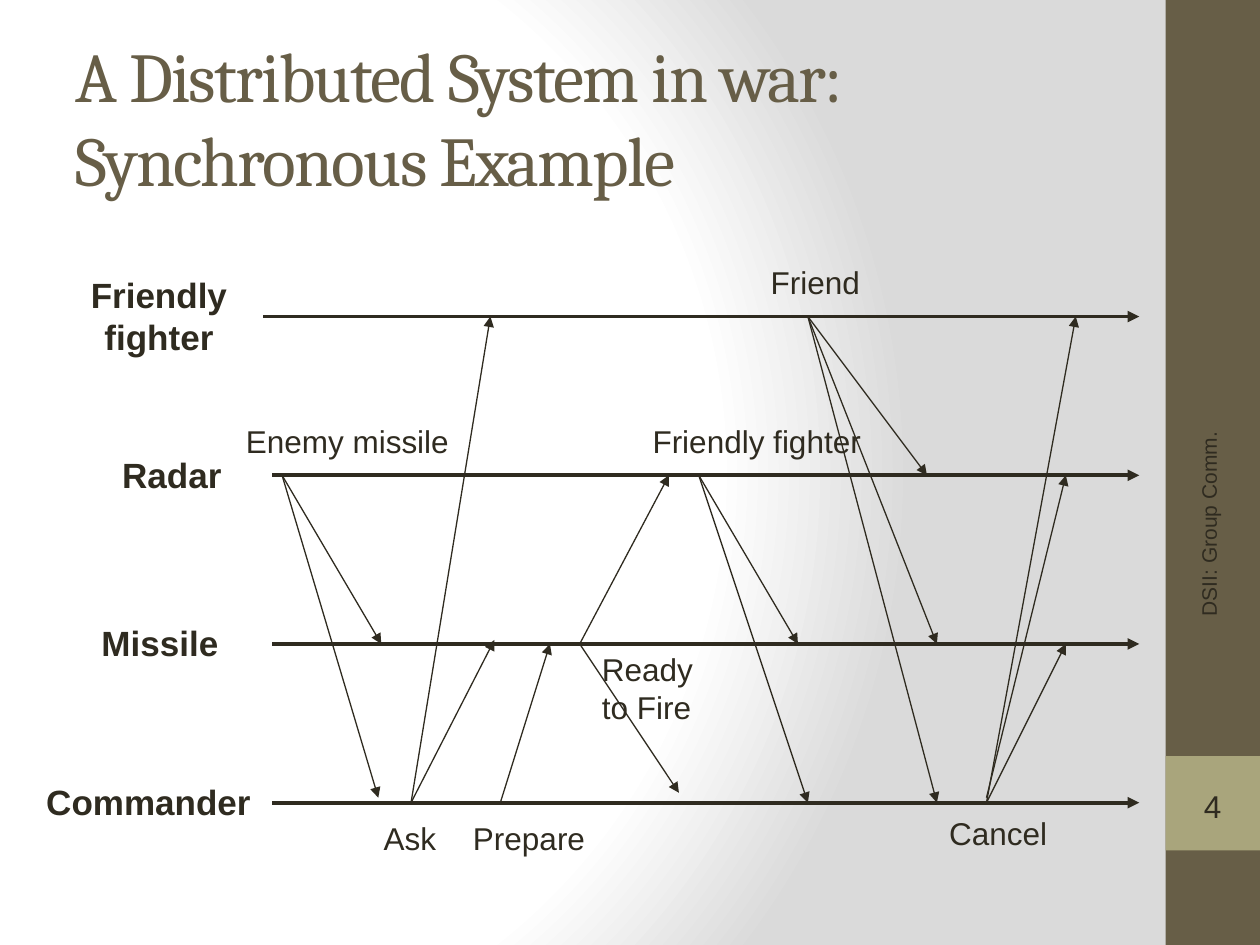
from collections import namedtuple
from dataclasses import dataclass

from pptx import Presentation
from pptx.dml.color import RGBColor
from pptx.enum.shapes import MSO_CONNECTOR, MSO_SHAPE
from pptx.enum.text import MSO_ANCHOR, MSO_AUTO_SIZE, PP_ALIGN
from pptx.oxml import parse_xml
from pptx.oxml.ns import nsdecls, qn
from pptx.util import Inches, Pt

Box = namedtuple("Box", "left top width height")
Label = namedtuple("Label", "text column row width height", defaults=(5.1,))
Lane = namedtuple("Lane", "text row start column width height", defaults=(5.5,))


@dataclass(frozen=True)
class Theme:
    """Colours, fonts and type sizes of the slide."""

    ink: str = "2F2B20"
    brown: str = "675E47"
    khaki: str = "A9A57C"
    white: str = "FFFFFF"
    grey: str = "DADADA"
    heading: str = "Cambria"
    body: str = "Arial"
    title_size: int = 40
    lane_size: int = 20
    event_size: int = 18
    footer_size: int = 12
    lane_weight: float = 2.25
    message_weight: float = 0.75


THEME = Theme()
SLIDE = Box(0, 0, 10, 7.5)
UNIT = 1 / 12.7
LANE_END = 87.4

LANES = [
    Lane("Friendly\nfighter", 0, -0.9, -19.6, 16.4, 9.8),
    Lane("Radar", 16, 0, -16.9, 13.6),
    Lane("Missile", 33, 0, -18.9, 15.2),
    Lane("Commander", 49, 0, -24, 23.1),
]
FIGHTER, RADAR, MISSILE, COMMANDER = (lane.row for lane in LANES)

MESSAGES = [
    ((1, RADAR), [(11, MISSILE), (10.7, 48.5)]),
    ((13, FIGHTER), [(13, FIGHTER)]),
    ((14, COMMANDER), [(22, FIGHTER), (22.4, 32.6)]),
    ((23, COMMANDER), [(28, MISSILE)]),
    ((31, MISSILE), [(40, RADAR), (41, 48)]),
    ((43, RADAR), [(53, MISSILE), (54, COMMANDER)]),
    ((54, FIGHTER), [(66, RADAR), (67, MISSILE), (67, COMMANDER)]),
    ((72, COMMANDER), [(80, MISSILE), (81, FIGHTER)]),
    ((72, 48.5), [(80, RADAR)]),
]
EVENTS = [
    Label("Enemy missile", -3.9, 10, 23),
    Label("Friend", 49, -6, 11.6),
    Label("Ready\nto Fire", 32, 33, 11.7, 8.9),
    Label("Cancel", 67, 49.5, 12.4),
    Label("Ask", 10, 50, 7.9),
    Label("Prepare", 19, 50, 13.8),
    Label("Friendly fighter", 37.1, 10, 23.8),
]


def share(box, left, top, width, height):
    """Return the part of a box given by shares of its size."""
    return Box(box.left + left * box.width, box.top + top * box.height,
               width * box.width, height * box.height)


def inches(box):
    """Return the four lengths of a box in slide units."""
    return [Inches(length) for length in box]


def write_text(shape, text, size, font=THEME.body, color=THEME.ink, bold=False,
               align=PP_ALIGN.LEFT, anchor=MSO_ANCHOR.TOP, wrap=True, spacing=0):
    """Fill a shape with formatted text, one paragraph a line."""
    frame = shape.text_frame
    frame.auto_size = MSO_AUTO_SIZE.NONE
    frame.word_wrap = wrap
    frame.vertical_anchor = anchor
    frame.text = text
    for para in frame.paragraphs:
        para.alignment = align
        for span in para.runs:
            span.font.size = Pt(size)
            span.font.name = font
            span.font.bold = bold
            span.font.color.rgb = RGBColor.from_string(color)
            if spacing:
                span.font._element.set("spc", str(spacing * 100))
    return frame


def add_block(page, box, color=None, kind=MSO_SHAPE.RECTANGLE):
    """Add an unlined shape, filled if a colour is given."""
    shape = page.shapes.add_shape(kind, *inches(box))
    shape.shadow.inherit = False
    shape.line.fill.background()
    if color:
        shape.fill.solid()
        shape.fill.fore_color.rgb = RGBColor.from_string(color)
    else:
        shape.fill.background()
    return shape


def add_arrow(page, start, end, weight):
    """Add a straight arrow between two points in inches."""
    ends = [Inches(length) for length in (*start, *end)]
    arrow = page.shapes.add_connector(MSO_CONNECTOR.STRAIGHT, *ends)
    arrow.line.color.rgb = RGBColor.from_string(THEME.ink)
    arrow.line.width = Pt(weight)
    arrow.line._get_or_add_ln().append(
        parse_xml(f'<a:tailEnd {nsdecls("a")} type="triangle"/>'))
    arrow._element.spPr.append(parse_xml(f'<a:effectLst {nsdecls("a")}/>'))


def paint_background(page):
    """Give the page a round fade from white to grey."""
    page.background.fill.solid()
    holder = page.element.find(".//" + qn("p:bgPr"))
    stops = "".join(
        f'<a:gs pos="{place * 1000}"><a:srgbClr val="{color}"/></a:gs>'
        for place, color in [(0, THEME.white), (75, THEME.white), (100, THEME.grey)])
    holder.replace(holder[0], parse_xml(
        f'<a:gradFill {nsdecls("a")} rotWithShape="1"><a:gsLst>{stops}</a:gsLst>'
        '<a:path path="circle"><a:fillToRect l="20000" t="50000" r="100000" b="50000"/>'
        '</a:path></a:gradFill>'))


def place_title(page, box, text):
    """Move and format the title placeholder."""
    title = page.shapes.title
    title.left, title.top, title.width, title.height = inches(box)
    write_text(title, text, THEME.title_size, font=THEME.heading, color=THEME.brown,
               anchor=MSO_ANCHOR.MIDDLE, spacing=-1)


def draw_sidebar(page, box, footer, number):
    """Draw the side band with its upright footer and page number."""
    add_block(page, box, THEME.brown)
    add_block(page, share(box, 0, 0.8, 1, 0.1), THEME.khaki)
    note = page.shapes.add_textbox(*inches(share(box, -1.27, 0.59, 3.45, 0.053)))
    note.rotation = 270
    write_text(note, footer, THEME.footer_size, align=PP_ALIGN.RIGHT,
               anchor=MSO_ANCHOR.MIDDLE)
    bracket = add_block(page, share(box, 0.1, 0.824, 0.8, 0.057),
                        kind=MSO_SHAPE.DOUBLE_BRACKET)
    frame = write_text(bracket, number, THEME.event_size, align=PP_ALIGN.CENTER,
                       anchor=MSO_ANCHOR.MIDDLE)
    frame.margin_left = frame.margin_right = frame.margin_top = frame.margin_bottom = 0


def draw_timeline(page, box):
    """Draw the lanes, their messages and the event labels on a square grid."""
    def point(column, row):
        """Return the place of a grid point in inches."""
        return box.left + column * UNIT, box.top + row * UNIT

    def add_label(label, size, **look):
        """Add an unwrapped text box at a grid cell."""
        area = Box(*point(label.column, label.row),
                   label.width * UNIT, label.height * UNIT)
        write_text(page.shapes.add_textbox(*inches(area)), label.text, size,
                   wrap=False, **look)

    for lane in LANES:
        add_arrow(page, point(lane.start, lane.row), point(LANE_END, lane.row),
                  THEME.lane_weight)
        name = Label(lane.text, lane.column, lane.row - lane.height / 2 - 0.1,
                     lane.width, lane.height)
        add_label(name, THEME.lane_size, bold=True, align=PP_ALIGN.CENTER)
    for sender, receivers in MESSAGES:
        for receiver in receivers:
            add_arrow(page, point(*sender), point(*receiver), THEME.message_weight)
    for event in EVENTS:
        add_label(event, THEME.event_size)


def main():
    """Build the slide and save the deck."""
    deck = Presentation()
    deck.slide_width, deck.slide_height = Inches(SLIDE.width), Inches(SLIDE.height)
    page = deck.slides.add_slide(deck.slide_layouts[5])
    paint_background(page)
    draw_sidebar(page, share(SLIDE, 0.925, 0, 0.075, 1), "DSII: Group Comm.", "4")
    place_title(page, share(SLIDE, 0.05, 0.04, 0.833, 0.167),
                "A Distributed System in war:\vSynchronous Example")
    draw_timeline(page, share(SLIDE, 0.216, 0.335, 0.688, 0.515))
    deck.save("out.pptx")


if __name__ == "__main__":
    main()
